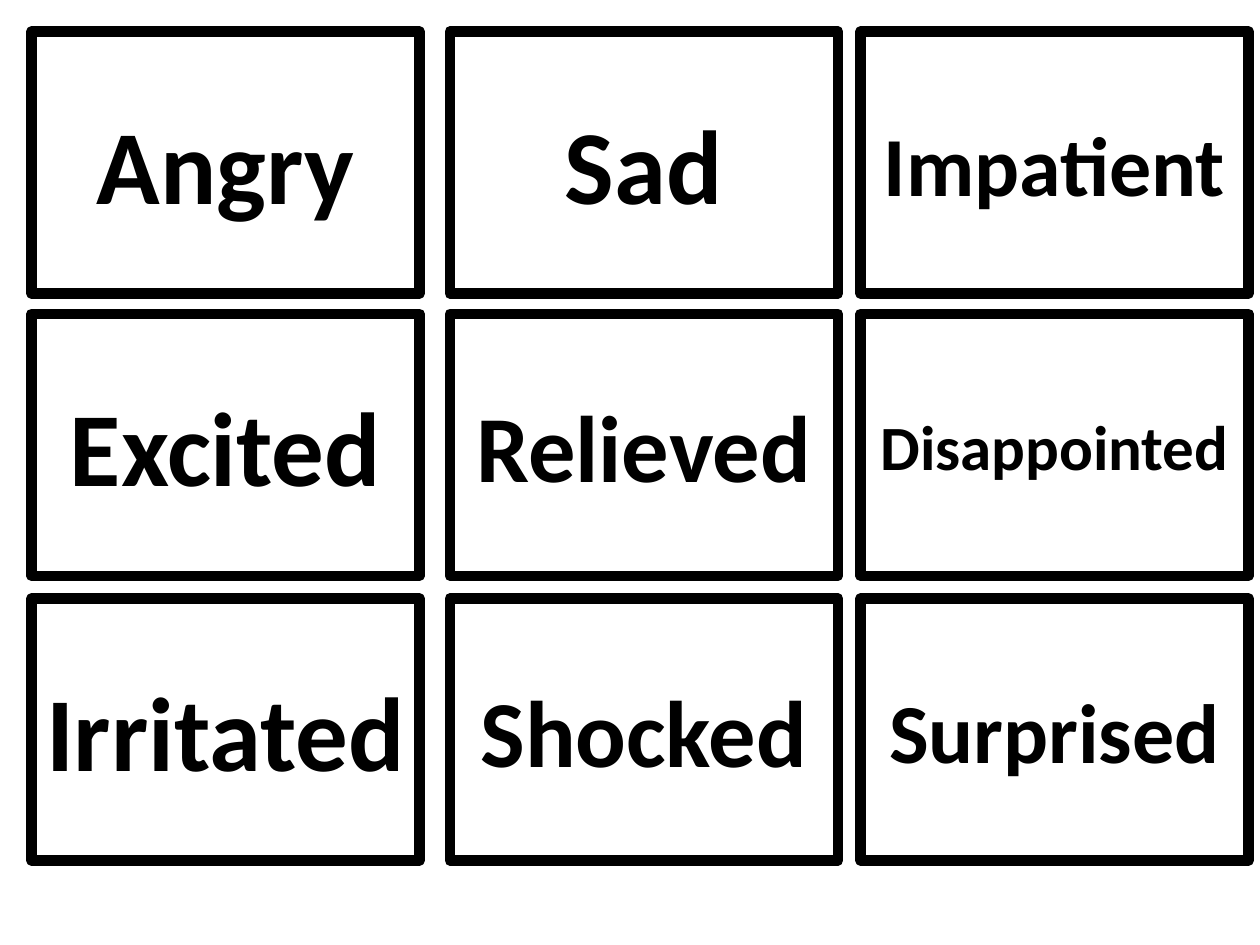
from itertools import product

from pptx import Presentation
from pptx.dml.color import RGBColor
from pptx.enum.shapes import MSO_SHAPE
from pptx.enum.text import MSO_ANCHOR, PP_ALIGN
from pptx.util import Emu, Pt

PX = 9144
COLORS = {"card": "FFFFFF", "ink": "000000"}
FONT = "Calibri"
CARD_WIDTH, CARD_HEIGHT = 308, 208
COLUMN_LEFTS = [0, 332, 658]
ROW_TOPS = [0, 224, 450]
EMOTIONS = [
    [("Angry", 60), ("Sad", 60), ("Impatient", 48)],
    [("Excited", 60), ("Relieved", 54), ("Disappointed", 36)],
    [("Irritated", 60), ("Shocked", 54), ("Surprised", 48)],
]


def px(length):
    return Emu(length * PX)


def color(name):
    return RGBColor.from_string(COLORS[name])


def add_card(slide, left, top, width, height, emotion, size):
    shape = slide.shapes.add_shape(
        MSO_SHAPE.RECTANGLE, px(left), px(top), px(width), px(height)
    )
    shape.shadow.inherit = False
    shape.fill.solid()
    shape.fill.fore_color.rgb = color("card")
    shape.line.color.rgb = color("ink")
    shape.line.width = Pt(6)
    text_frame = shape.text_frame
    text_frame.word_wrap = True
    text_frame.vertical_anchor = MSO_ANCHOR.MIDDLE
    text_frame.text = emotion
    paragraph = text_frame.paragraphs[0]
    paragraph.alignment = PP_ALIGN.CENTER
    font = paragraph.runs[0].font
    font.name = FONT
    font.size = Pt(size)
    font.bold = True
    font.color.rgb = color("ink")


def add_card_grid(slide, left, top):
    for row, column in product(range(len(ROW_TOPS)), range(len(COLUMN_LEFTS))):
        emotion, size = EMOTIONS[row][column]
        add_card(
            slide,
            left + COLUMN_LEFTS[column],
            top + ROW_TOPS[row],
            CARD_WIDTH,
            CARD_HEIGHT,
            emotion,
            size,
        )


def main():
    presentation = Presentation()
    presentation.slide_width = px(1000)
    presentation.slide_height = px(750)
    slide = presentation.slides.add_slide(presentation.slide_layouts[6])
    add_card_grid(slide, 25, 25)
    presentation.save("out.pptx")


if __name__ == "__main__":
    main()
